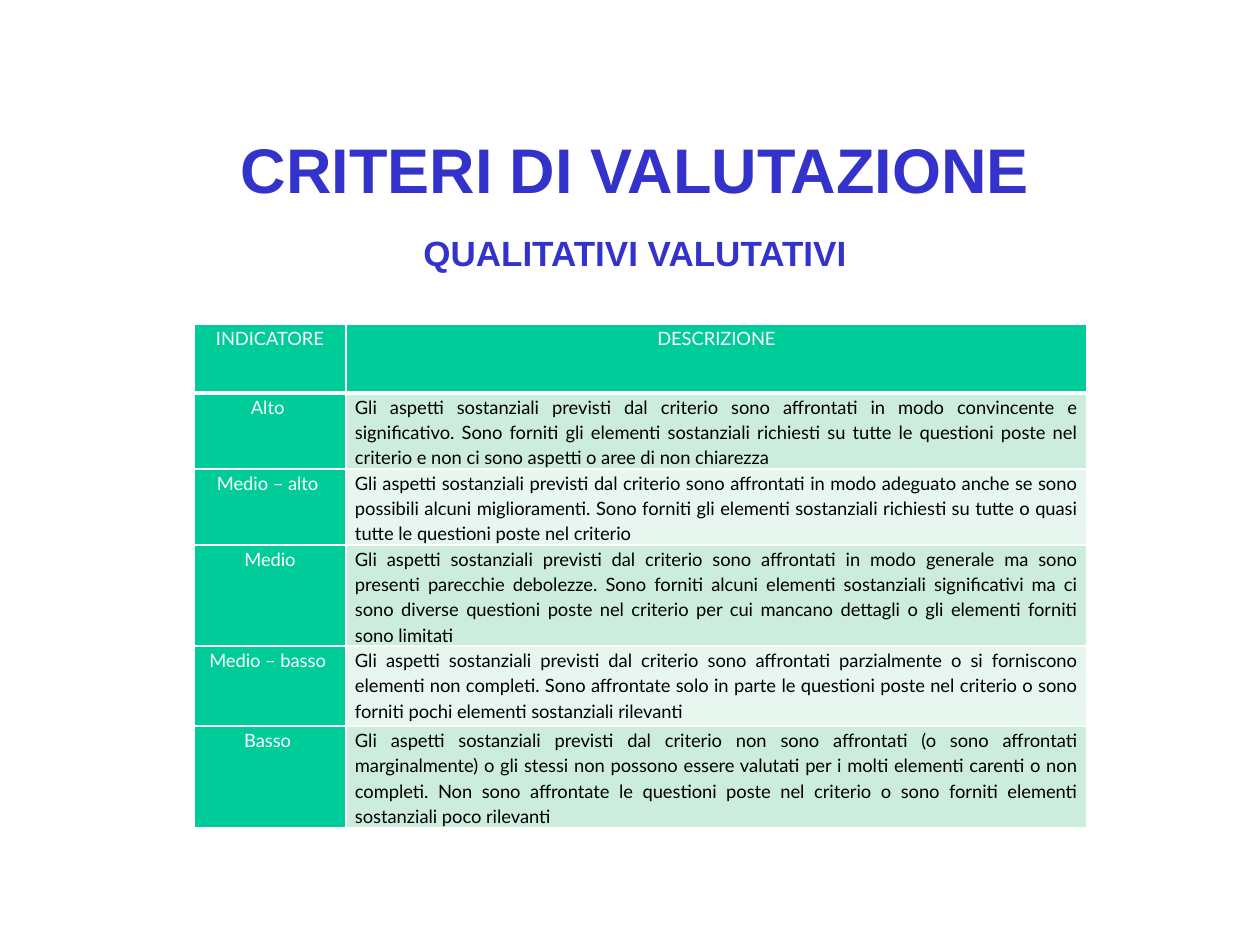
"""Build the slide of qualitative evaluation criteria."""
import dataclasses
import typing

import lxml.etree
import pptx
import pptx.dml.color
import pptx.enum.text
import pptx.oxml.ns
import pptx.util

EMU_PER_PX = 914400 / 126
ALIGN = pptx.enum.text.PP_ALIGN
INDIGO, GREEN, WHITE, BLACK = "3333CC", "00CC99", "FFFFFF", "000000"
BANDS = ("CCECDE", "E7F6EF")
COLUMN_WIDTHS = (152, 741)


@dataclasses.dataclass(frozen=True)
class Criterion:
    """One table row: its level, description and height in px."""
    level: str
    description: str
    height: int


@dataclasses.dataclass(frozen=True)
class Style:
    """Look of a paragraph."""
    font: str
    size: float
    color: str
    bold: bool = False
    align: typing.Any = ALIGN.CENTER


HEADER = Criterion("INDICATORE", "DESCRIZIONE", 69)
CRITERIA = (
    Criterion("Alto ", "Gli aspetti sostanziali previsti dal criterio sono affrontati in modo "
              "convincente e significativo. Sono forniti gli elementi sostanziali richiesti su "
              "tutte le questioni poste nel criterio e non ci sono aspetti o aree di non "
              "chiarezza", 74),
    Criterion("Medio – alto ", "Gli aspetti sostanziali previsti dal criterio sono affrontati in "
              "modo adeguato anche se sono possibili alcuni miglioramenti. Sono forniti gli "
              "elementi sostanziali richiesti su tutte o quasi tutte le questioni poste nel "
              "criterio", 74),
    Criterion("Medio", "Gli aspetti sostanziali previsti dal criterio sono affrontati in modo "
              "generale ma sono presenti parecchie debolezze. Sono forniti alcuni elementi "
              "sostanziali significativi ma ci sono diverse questioni poste nel criterio per cui "
              "mancano dettagli o gli elementi forniti sono limitati", 82),
    Criterion("Medio – basso ", "Gli aspetti sostanziali previsti dal criterio sono affrontati "
              "parzialmente o si forniscono elementi non completi. Sono affrontate solo in parte "
              "le questioni poste nel criterio o sono forniti pochi elementi sostanziali "
              "rilevanti", 80),
    Criterion("Basso ", "Gli aspetti sostanziali previsti dal criterio non sono affrontati (o "
              "sono affrontati marginalmente) o gli stessi non possono essere valutati per i "
              "molti elementi carenti o non completi. Non sono affrontate le questioni poste nel "
              "criterio o sono forniti elementi sostanziali poco rilevanti", 78),
)


def px(length: int) -> pptx.util.Emu:
    """Turn px into EMU."""
    return pptx.util.Emu(round(length * EMU_PER_PX))


def rgb(color: str) -> pptx.dml.color.RGBColor:
    """Turn a hex string into a colour."""
    return pptx.dml.color.RGBColor.from_string(color)


def apply(target: typing.Any, values: dict[str, typing.Any]) -> None:
    """Set each named attribute on the target."""
    for name, value in values.items():
        setattr(target, name, value)


def write(paragraph: typing.Any, text: str, style: Style, **spacing: typing.Any) -> None:
    """Write styled text into a paragraph."""
    run = paragraph.add_run()
    run.text = text
    apply(paragraph, {"alignment": style.align, **spacing})
    apply(run.font, {"name": style.font, "size": pptx.util.Pt(style.size), "bold": style.bold})
    run.font.color.rgb = rgb(style.color)


def add_borders(cell: typing.Any, bottom_width: int) -> None:
    """Give a cell white borders, 1 pt apart from its bottom."""
    properties = cell._tc.get_or_add_tcPr()
    widths = {"lnL": 1, "lnR": 1, "lnT": 1, "lnB": bottom_width}
    for position, (side, width) in enumerate(widths.items()):
        line = lxml.etree.Element(pptx.oxml.ns.qn(f"a:{side}"), w=str(pptx.util.Pt(width)))
        fill = lxml.etree.SubElement(line, pptx.oxml.ns.qn("a:solidFill"))
        lxml.etree.SubElement(fill, pptx.oxml.ns.qn("a:srgbClr"), val=WHITE)
        properties.insert(position, line)


def fill_cell(cell: typing.Any, text: str, fill: str, style: Style, bottom_width: int) -> None:
    """Fill a table cell with text, colour and borders."""
    apply(cell, {"margin_left": px(9), "margin_right": px(9), "margin_top": 0, "margin_bottom": 0})
    cell.fill.solid()
    cell.fill.fore_color.rgb = rgb(fill)
    add_borders(cell, bottom_width)
    write(cell.text_frame.paragraphs[0], text, style,
          line_spacing=1.15, space_after=pptx.util.Pt(10))


def add_heading(slide: typing.Any) -> None:
    """Add the title and subtitle."""
    heading = slide.shapes.add_textbox(px(64), px(118), px(1142), px(702)).text_frame
    apply(heading, {"word_wrap": True, "margin_top": px(12)})
    write(heading.paragraphs[0], "CRITERI DI VALUTAZIONE", Style("Arial", 36, INDIGO, True))
    write(heading.add_paragraph(), "QUALITATIVI VALUTATIVI", Style("Arial", 20, INDIGO, True),
          space_before=pptx.util.Pt(15))


def add_criteria(slide: typing.Any) -> None:
    """Add the table of levels and descriptions."""
    rows = (HEADER, *CRITERIA)
    table = slide.shapes.add_table(
        len(rows), len(COLUMN_WIDTHS), px(194), px(324),
        px(sum(COLUMN_WIDTHS)), px(sum(row.height for row in rows))).table
    for column, width in zip(table.columns, COLUMN_WIDTHS):
        column.width = px(width)
    label = Style("Lato", 10.5, WHITE)
    body = Style("Lato", 10.5, BLACK, align=ALIGN.JUSTIFY)
    for index, row in enumerate(rows):
        is_header = row is HEADER
        bottom_width = 3 if is_header else 1
        table.rows[index].height = px(row.height)
        fill_cell(table.cell(index, 0), row.level, GREEN, label, bottom_width)
        fill_cell(table.cell(index, 1), row.description,
                  GREEN if is_header else BANDS[(index - 1) % 2],
                  label if is_header else body, bottom_width)


def main() -> None:
    """Build and save the slide."""
    presentation = pptx.Presentation()
    apply(presentation, {"slide_width": px(1260), "slide_height": px(945)})
    slide = presentation.slides.add_slide(presentation.slide_layouts[6])
    add_heading(slide)
    add_criteria(slide)
    presentation.save("out.pptx")


if __name__ == "__main__":
    main()
